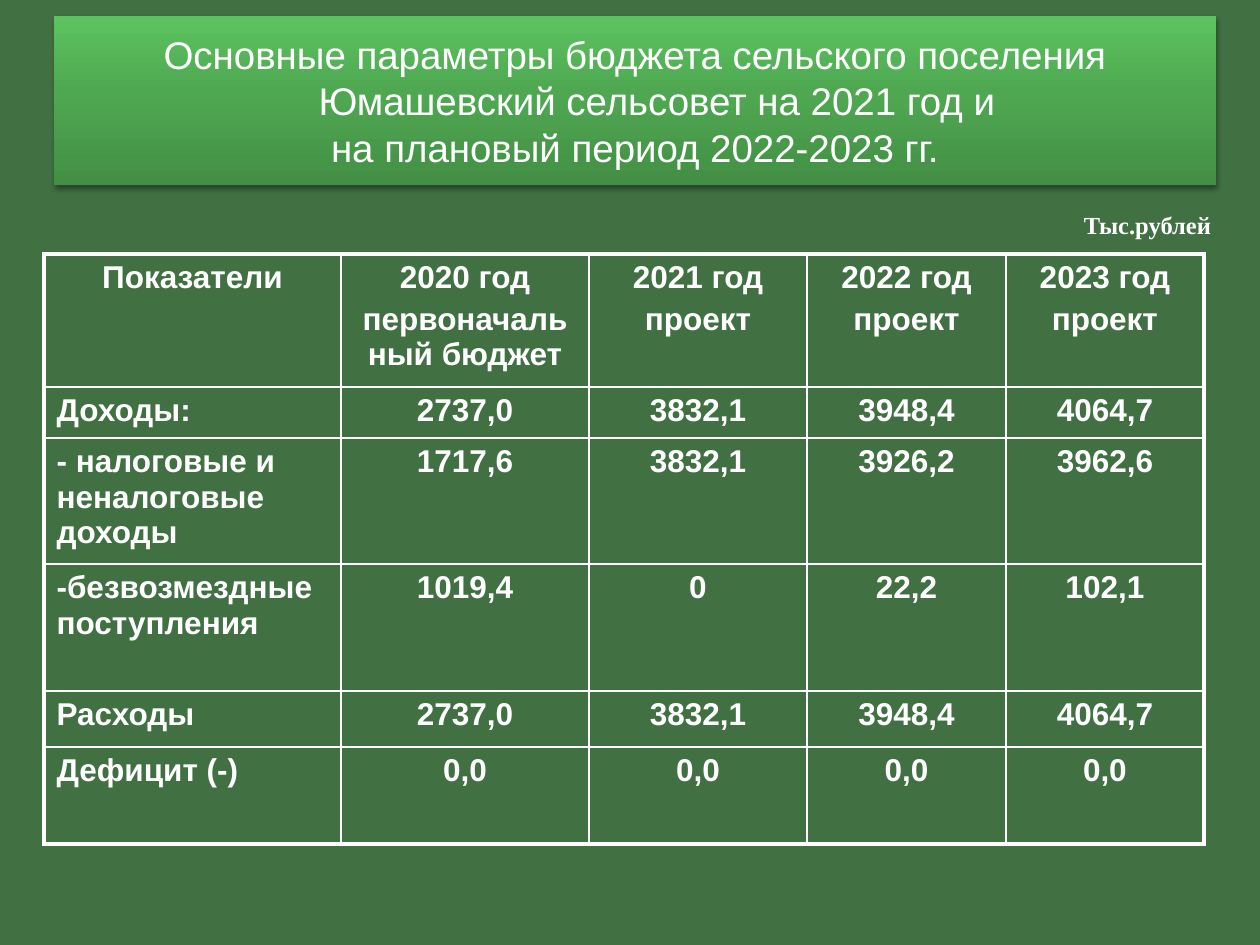
from copy import deepcopy

from lxml.etree import SubElement
from pptx import Presentation
from pptx.dml.color import RGBColor
from pptx.enum.shapes import MSO_SHAPE as Shape
from pptx.enum.text import MSO_ANCHOR as Anchor, MSO_AUTO_SIZE as AutoSize, PP_ALIGN as Align
from pptx.oxml.ns import qn
from pptx.util import Emu, Pt

EMU_PER_PX = 914400 / 126
COLUMNS = [297, 248, 218, 199, 198]
ROWS = [133, 51, 126, 127, 56, 97]
BUDGET = [
    ["Показатели", "2020 год\nпервоначальный бюджет", "2021 год\nпроект",
     "2022 год\nпроект", "2023 год\nпроект"],
    ["Доходы:", "2737,0", "3832,1", "3948,4", "4064,7"],
    ["- налоговые и неналоговые доходы", "1717,6", "3832,1", "3926,2", "3962,6"],
    ["-безвозмездные поступления", "1019,4", "0", "22,2", "102,1"],
    ["Расходы", "2737,0", "3832,1", "3948,4", "4064,7"],
    ["Дефицит (-)", "0,0", "0,0", "0,0", "0,0"],
]


def px(length):
    return Emu(round(length * EMU_PER_PX))


def color(value):
    return RGBColor.from_string(value)


def write(frame, text, size=18, font="Arial", bold=False, align=Align.CENTER,
          before=0, hanging=0):
    for index, line in enumerate(text.split("\n")):
        para = frame.paragraphs[0] if index == 0 else frame.add_paragraph()
        para.text = line
        para.alignment = align
        para.space_before = Pt(before)
        if hanging:
            properties = para._p.get_or_add_pPr()
            properties.set("marL", str(px(hanging)))
            properties.set("indent", str(-px(hanging)))
        for span in para.runs:
            span.font.size = Pt(size)
            span.font.name = font
            span.font.bold = bold
            span.font.color.rgb = color(BudgetSlide.ink)


class BudgetSlide:
    """Holds the slide style and draws each kind of element."""

    ink = "FFFFFF"
    background = "417043"
    gradient = [(0, "438F45"), (0.55, "4FA851"), (1, "5CC35F")]
    thin, thick = 1, 2.25

    def __init__(self, deck):
        self.slide = deck.slides.add_slide(deck.slide_layouts[6])
        fill = self.slide.background.fill
        fill.solid()
        fill.fore_color.rgb = color(self.background)

    def banner(self, left, top, width, height, text):
        box = self.slide.shapes.add_shape(
            Shape.RECTANGLE, px(left), px(top), px(width), px(height))
        box.line.fill.background()
        box.fill.gradient()
        box.fill.gradient_angle = 90
        stop_list = box._element.spPr.find(qn("a:gradFill")).find(qn("a:gsLst"))
        stop_list.append(deepcopy(stop_list[0]))
        for stop, (position, value) in zip(box.fill.gradient_stops, self.gradient):
            stop.position = position
            stop.color.rgb = color(value)
        self.shadow(box)
        box.text_frame.word_wrap = True
        box.text_frame.vertical_anchor = Anchor.MIDDLE
        write(box.text_frame, text, size=22, hanging=44)

    def shadow(self, box):
        box.shadow.inherit = False
        effects = box._element.spPr.find(qn("a:effectLst"))
        outer = SubElement(effects, qn("a:outerShdw"), blurRad=str(Pt(3.1)),
                           dist=str(Pt(2)), dir="5400000", rotWithShape="0")
        shade = SubElement(outer, qn("a:srgbClr"), val="000000")
        SubElement(shade, qn("a:alpha"), val="38000")

    def label(self, left, top, width, height, text):
        box = self.slide.shapes.add_textbox(px(left), px(top), px(width), px(height))
        box.text_frame.word_wrap = False
        box.text_frame.auto_size = AutoSize.SHAPE_TO_FIT_TEXT
        write(box.text_frame, text, size=14, font="Times New Roman", bold=True)

    def table(self, left, top, columns, rows, values):
        table = self.slide.shapes.add_table(
            len(rows), len(columns), px(left), px(top),
            px(sum(columns)), px(sum(rows))).table
        table.first_row = table.horz_banding = False
        for column, width in zip(table.columns, columns):
            column.width = px(width)
        for row, height in zip(table.rows, rows):
            row.height = px(height)
        last_row, last_column = len(rows) - 1, len(columns) - 1
        for i, line in enumerate(values):
            for j, text in enumerate(line):
                cell = table.cell(i, j)
                self.borders(cell, L=j == 0, R=j == last_column,
                             T=i == 0, B=i == last_row)
                cell.fill.background()
                align = Align.LEFT if i and j == 0 else Align.CENTER
                write(cell.text_frame, text, bold=True, align=align, before=3.6)

    def borders(self, cell, **outer_sides):
        properties = cell._tc.get_or_add_tcPr()
        for side, outer in outer_sides.items():
            width = Pt(self.thick if outer else self.thin)
            line = SubElement(properties, qn(f"a:ln{side}"), w=str(width))
            fill = SubElement(line, qn("a:solidFill"))
            SubElement(fill, qn("a:srgbClr"), val=self.ink)


def main():
    deck = Presentation()
    deck.slide_width, deck.slide_height = px(1260), px(945)
    page = BudgetSlide(deck)
    page.table(44, 254, COLUMNS, ROWS, BUDGET)
    page.banner(54, 16, 1162, 169,
                "Основные параметры бюджета сельского поселения\v"
                "Юмашевский сельсовет на 2021 год и\n"
                "на плановый период 2022-2023 гг.")
    page.label(1070, 204, 155, 42, "Тыс.рублей")
    deck.save("out.pptx")


if __name__ == "__main__":
    main()
